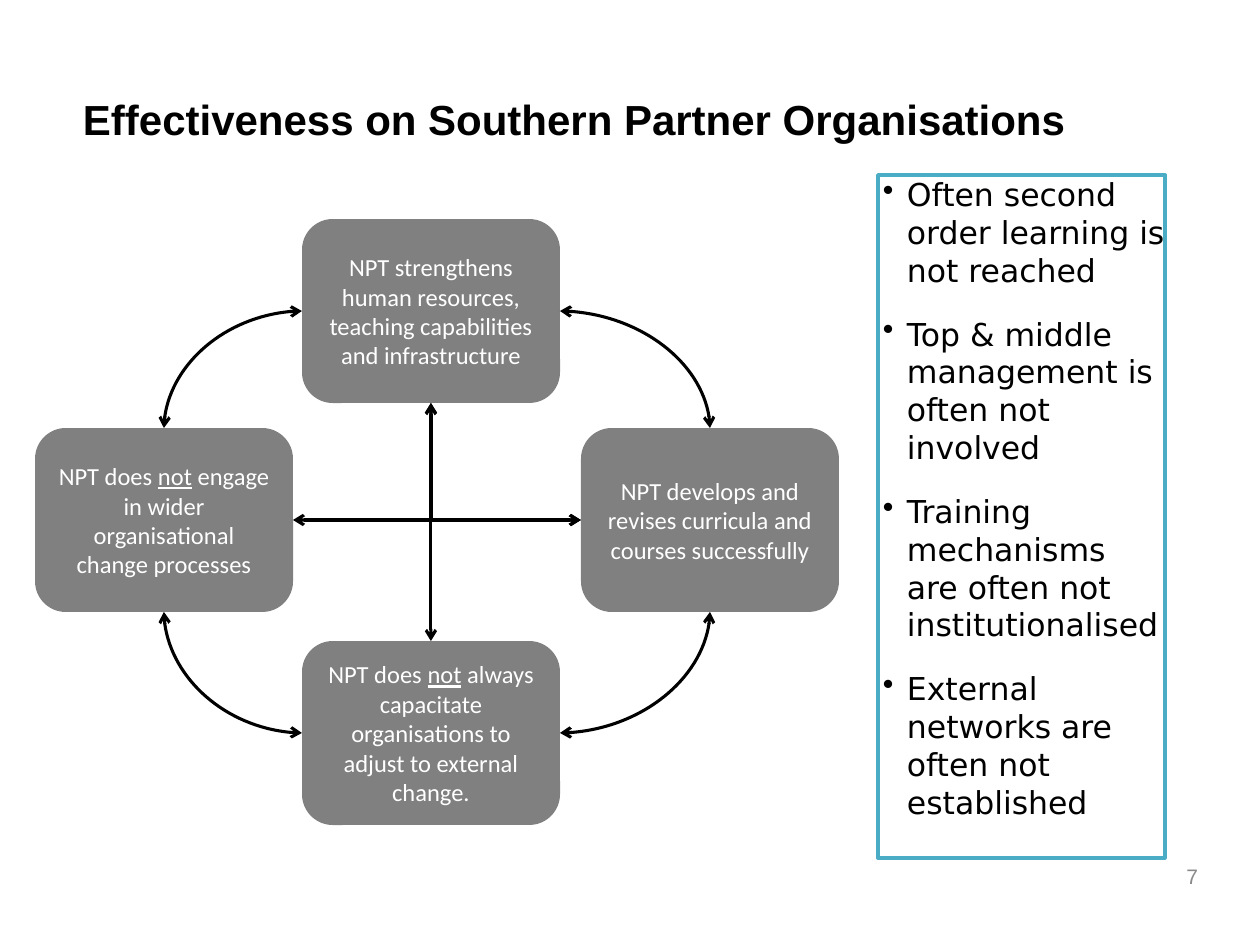
from pptx import Presentation
from pptx.dml.color import RGBColor
from pptx.enum.shapes import MSO_CONNECTOR, MSO_SHAPE
from pptx.enum.text import MSO_ANCHOR, PP_ALIGN
from pptx.oxml.ns import qn
from pptx.util import Emu, Pt

RECTANGLE, ROUNDED = MSO_SHAPE.RECTANGLE, MSO_SHAPE.ROUNDED_RECTANGLE
CURVE, ELBOW = MSO_CONNECTOR.CURVE, MSO_CONNECTOR.ELBOW
TOP, MIDDLE = MSO_ANCHOR.TOP, MSO_ANCHOR.MIDDLE
LEFT, CENTER = PP_ALIGN.LEFT, PP_ALIGN.CENTER
TOP_SITE, LEFT_SITE, BOTTOM_SITE, RIGHT_SITE = range(4)
CORNER_PRESETS = {CURVE: "curvedConnector2", ELBOW: "bentConnector2"}

PX_PER_INCH = 126
BOX_WIDTH, BOX_HEIGHT = 258, 184


def px(length):
    return Emu(round(length * 914400 / PX_PER_INCH))


def color(value):
    return RGBColor.from_string(value)


def set_values(target, values):
    for name, value in values.items():
        setattr(target, name, value)


class SlideBuilder:
    black = "000000"
    box_gray = "808080"
    number_gray = "898989"
    white = "FFFFFF"
    teal = "4BACC6"
    title_font = {"name": "Arial", "size": Pt(24), "bold": True}
    number_font = {"name": "Arial", "size": Pt(12)}
    box_font = {"name": "Calibri", "size": Pt(14)}
    panel_font = {"name": "DejaVu Sans", "size": Pt(18)}
    no_margins = dict.fromkeys(("margin_left", "margin_top", "margin_right", "margin_bottom"), 0)

    def __init__(self, page):
        self.page = page

    def add_spans(self, para, text, font, font_color):
        for index, part in enumerate(text.split("_")):
            span = para.add_run()
            span.text = part
            set_values(span.font, font)
            span.font.color.rgb = color(font_color)
            if index % 2:
                span.font.underline = True

    def text(self, place, text, font, font_color, anchor, margins):
        box = self.page.shapes.add_textbox(*map(px, place))
        set_values(box.text_frame, {"word_wrap": True, "vertical_anchor": anchor, **margins})
        self.add_spans(box.text_frame.paragraphs[0], text, font, font_color)

    def shape(self, kind, place):
        shape = self.page.shapes.add_shape(kind, *map(px, place))
        shape.shadow.inherit = False
        shape.text_frame.word_wrap = True
        return shape

    def box(self, left, top, text):
        box = self.shape(ROUNDED, (left, top, BOX_WIDTH, BOX_HEIGHT))
        box.fill.solid()
        box.fill.fore_color.rgb = color(self.box_gray)
        box.line.fill.background()
        box.text_frame.vertical_anchor = MIDDLE
        para = box.text_frame.paragraphs[0]
        para.alignment = CENTER
        self.add_spans(para, text, self.box_font, self.white)
        return box

    def arrow(self, kind, start, start_site, end, end_site):
        arrow = self.page.shapes.add_connector(kind, 0, 0, 0, 0)
        arrow.begin_connect(start, start_site)
        arrow.end_connect(end, end_site)
        arrow.line.width = Pt(1.75)
        arrow.line.color.rgb = color(self.black)
        properties = arrow._element.spPr
        properties.find(qn("a:prstGeom")).set("prst", CORNER_PRESETS[kind])
        line = properties.find(qn("a:ln"))
        for tag in ("a:headEnd", "a:tailEnd"):
            line.append(line.makeelement(qn(tag), {"type": "arrow"}))
        properties.append(properties.makeelement(qn("a:effectLst"), {}))

    def bullet_panel(self, place, items):
        panel = self.shape(RECTANGLE, place)
        panel.fill.background()
        panel.line.width = Pt(2)
        panel.line.color.rgb = color(self.teal)
        frame = panel.text_frame
        set_values(frame, {**self.no_margins, "margin_left": px(5), "vertical_anchor": TOP})
        for index, item in enumerate(items):
            para = frame.add_paragraph() if index else frame.paragraphs[0]
            properties = para._p.get_or_add_pPr()
            properties.set("marL", str(px(24)))
            properties.set("indent", str(-px(24)))
            properties.append(properties.makeelement(qn("a:buChar"), {"char": "•"}))
            set_values(para, {"alignment": LEFT, "line_spacing": Pt(21.6), "space_after": Pt(15)})
            self.add_spans(para, item, self.panel_font, self.black)


def main():
    deck = Presentation()
    deck.slide_width, deck.slide_height = px(1260), px(945)
    builder = SlideBuilder(deck.slides.add_slide(deck.slide_layouts[6]))

    builder.text((83, 94, 1071, 126), "Effectiveness on Southern Partner Organisations",
                 builder.title_font, builder.black, TOP, builder.no_margins)
    builder.text((1174, 866, 49, 21), "7", builder.number_font, builder.number_gray, MIDDLE, {})

    strengths = builder.box(
        302, 219, "NPT strengthens human resources, teaching capabilities and infrastructure")
    curricula = builder.box(
        581, 428, "NPT develops and revises curricula and courses successfully")
    capacity = builder.box(
        302, 641, "NPT does _not_ always capacitate organisations to adjust to external change.")
    processes = builder.box(
        35, 428, "NPT does _not_ engage in wider organisational change processes")

    for middle, facing_site in ((strengths, TOP_SITE), (capacity, BOTTOM_SITE)):
        builder.arrow(CURVE, middle, RIGHT_SITE, curricula, facing_site)
        builder.arrow(CURVE, middle, LEFT_SITE, processes, facing_site)
    builder.arrow(ELBOW, curricula, LEFT_SITE, strengths, BOTTOM_SITE)
    builder.arrow(ELBOW, curricula, LEFT_SITE, capacity, TOP_SITE)
    builder.arrow(ELBOW, processes, RIGHT_SITE, strengths, BOTTOM_SITE)

    builder.bullet_panel((878, 175, 287, 683), (
        "Often second order learning is not reached",
        "Top & middle management is often not involved",
        "Training mechanisms are often not institutionalised",
        "External networks are often not established",
    ))
    deck.save("out.pptx")


if __name__ == "__main__":
    main()
